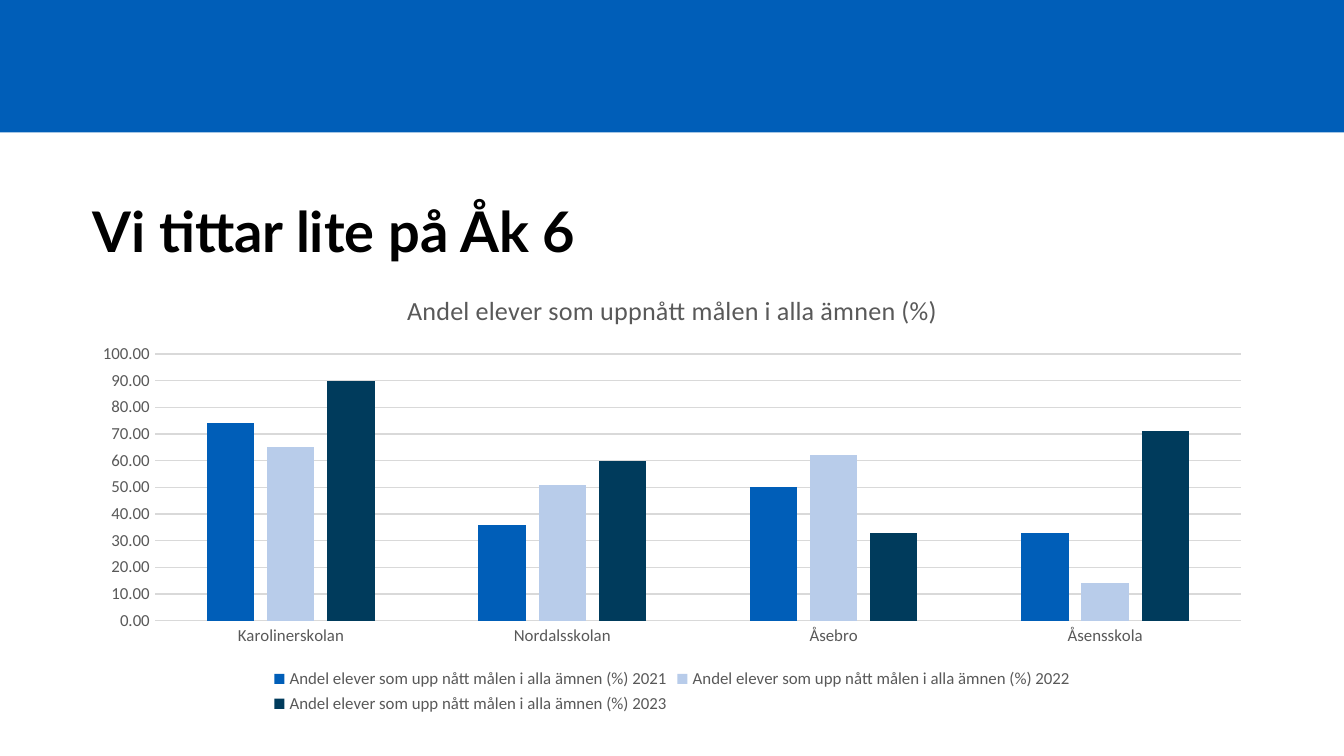
"""Build a slide comparing pupils' results in four schools over three years."""
from dataclasses import dataclass
from typing import Any

from lxml import etree
from pptx import Presentation
from pptx.chart.data import CategoryChartData
from pptx.dml.color import RGBColor
from pptx.enum.chart import XL_CHART_TYPE, XL_LEGEND_POSITION, XL_TICK_MARK
from pptx.enum.shapes import MSO_SHAPE
from pptx.enum.text import MSO_ANCHOR
from pptx.oxml.ns import qn
from pptx.util import Pt

COLUMNS = XL_CHART_TYPE.COLUMN_CLUSTERED
LEGEND_BOTTOM = XL_LEGEND_POSITION.BOTTOM
NO_TICK = XL_TICK_MARK.NONE
RECTANGLE = MSO_SHAPE.RECTANGLE
ANCHOR_BOTTOM = MSO_ANCHOR.BOTTOM


@dataclass(frozen=True)
class Theme:
    blue: str = "005EB8"
    pale_blue: str = "B8CCEA"
    navy: str = "003B5C"
    black: str = "000000"
    grey: str = "595959"
    grid: str = "D9D9D9"
    heading_font: str = "Lato"
    chart_font: str = "Calibri"
    heading_size: float = 30
    chart_title_size: float = 14
    chart_size: float = 10
    label_size: float = 9
    line_width: float = 0.75


@dataclass(frozen=True)
class Box:
    left: float
    top: float
    width: float
    height: float

    def lengths(self) -> tuple[Pt, Pt, Pt, Pt]:
        return Pt(self.left), Pt(self.top), Pt(self.width), Pt(self.height)


@dataclass(frozen=True)
class YearSeries:
    year: int
    values: tuple[int, ...]
    color: str


THEME = Theme()
SLIDE = Box(0, 0, 720, 405)
BANNER = Box(0, 0, 720, 71)
HEADING = Box(42.5, 87.8, 579.4, 57.6)
CHART = Box(42.5, 145.4, 635, 239.8)
CHART_TITLE_LEFT, CHART_TITLE_TOP = 173, 8.6
PLOT = Box(40.6, 44.3, 581.7, 142.9)
SCHOOLS = ("Karolinerskolan", "Nordalsskolan", "Åsebro", "Åsensskola")
YEARS = (
    YearSeries(2021, (74, 36, 50, 33), THEME.blue),
    YearSeries(2022, (65, 51, 62, 14), THEME.pale_blue),
    YearSeries(2023, (90, 60, 33, 71), THEME.navy),
)


def style_font(font: Any, size: float, color: str, name: str, bold: bool = False) -> None:
    font.size, font.name, font.bold = Pt(size), name, bold
    font.color.rgb = RGBColor.from_string(color)


def write_text(frame: Any, text: str, *, size: float, color: str, name: str,
               bold: bool = False, line_spacing: float | None = None) -> None:
    paragraph = frame.paragraphs[0]
    if line_spacing:
        paragraph.line_spacing = line_spacing
    run = paragraph.add_run()
    run.text = text
    style_font(run.font, size, color, name, bold)


def style_line(line: Any) -> None:
    line.color.rgb = RGBColor.from_string(THEME.grid)
    line.width = Pt(THEME.line_width)


def place_part(parent: Any, index: int, **settings: Any) -> None:
    for old_layout in parent.findall(qn("c:layout")):
        parent.remove(old_layout)
    layout = etree.Element(qn("c:layout"))
    manual = etree.SubElement(layout, qn("c:manualLayout"))
    for tag, value in settings.items():
        etree.SubElement(manual, qn(f"c:{tag}")).set("val", str(value))
    parent.insert(index, layout)


def add_banner(slide: Any) -> None:
    banner = slide.shapes.add_shape(RECTANGLE, *BANNER.lengths())
    banner.shadow.inherit = False
    banner.fill.solid()
    banner.fill.fore_color.rgb = RGBColor.from_string(THEME.blue)
    banner.line.fill.background()


def add_heading(slide: Any, text: str) -> None:
    frame = slide.shapes.add_textbox(*HEADING.lengths()).text_frame
    frame.word_wrap = True
    frame.vertical_anchor = ANCHOR_BOTTOM
    write_text(frame, text, size=THEME.heading_size, color=THEME.black,
               name=THEME.heading_font, bold=True, line_spacing=0.9)


def add_results_chart(slide: Any) -> None:
    data = CategoryChartData(number_format="0.00")
    data.categories = SCHOOLS
    for series in YEARS:
        data.add_series(f"Andel elever som upp nått målen i alla ämnen (%) {series.year}",
                        series.values)
    chart = slide.shapes.add_chart(COLUMNS, *CHART.lengths(), data).chart
    style_font(chart.font, THEME.chart_size, THEME.black, THEME.chart_font)

    chart.has_title = True
    write_text(chart.chart_title.text_frame, "Andel elever som uppnått målen i alla ämnen (%)",
               size=THEME.chart_title_size, color=THEME.grey, name=THEME.chart_font)
    chart.chart_title.include_in_layout = False
    place_part(chart.chart_title._element, 1, xMode="edge", yMode="edge",
               x=CHART_TITLE_LEFT / CHART.width, y=CHART_TITLE_TOP / CHART.height)

    plot = chart.plots[0]
    plot.gap_width, plot.overlap = 219, -27
    plot.vary_by_categories = False
    place_part(plot._element.getparent(), 0, layoutTarget="inner", xMode="edge", yMode="edge",
               x=PLOT.left / CHART.width, y=PLOT.top / CHART.height,
               w=PLOT.width / CHART.width, h=PLOT.height / CHART.height)
    for bars, series in zip(plot.series, YEARS):
        bars.format.fill.solid()
        bars.format.fill.fore_color.rgb = RGBColor.from_string(series.color)
        bars.invert_if_negative = False

    for axis in (chart.category_axis, chart.value_axis):
        axis.major_tick_mark = axis.minor_tick_mark = NO_TICK
        style_font(axis.tick_labels.font, THEME.label_size, THEME.grey, THEME.chart_font)
    style_line(chart.category_axis.format.line)
    values = chart.value_axis
    values.minimum_scale, values.maximum_scale, values.major_unit = 0, 100, 10
    values.tick_labels.number_format = "0.00"
    values.tick_labels.number_format_is_linked = False
    values.format.line.fill.background()
    style_line(values.major_gridlines.format.line)

    chart.has_legend = True
    chart.legend.position = LEGEND_BOTTOM
    chart.legend.include_in_layout = False
    style_font(chart.legend.font, THEME.label_size, THEME.grey, THEME.chart_font)


def main() -> None:
    presentation = Presentation()
    presentation.slide_width, presentation.slide_height = Pt(SLIDE.width), Pt(SLIDE.height)
    slide = presentation.slides.add_slide(presentation.slide_layouts[6])
    add_banner(slide)
    add_heading(slide, "Vi tittar lite på Åk 6")
    add_results_chart(slide)
    presentation.save("out.pptx")


if __name__ == "__main__":
    main()
